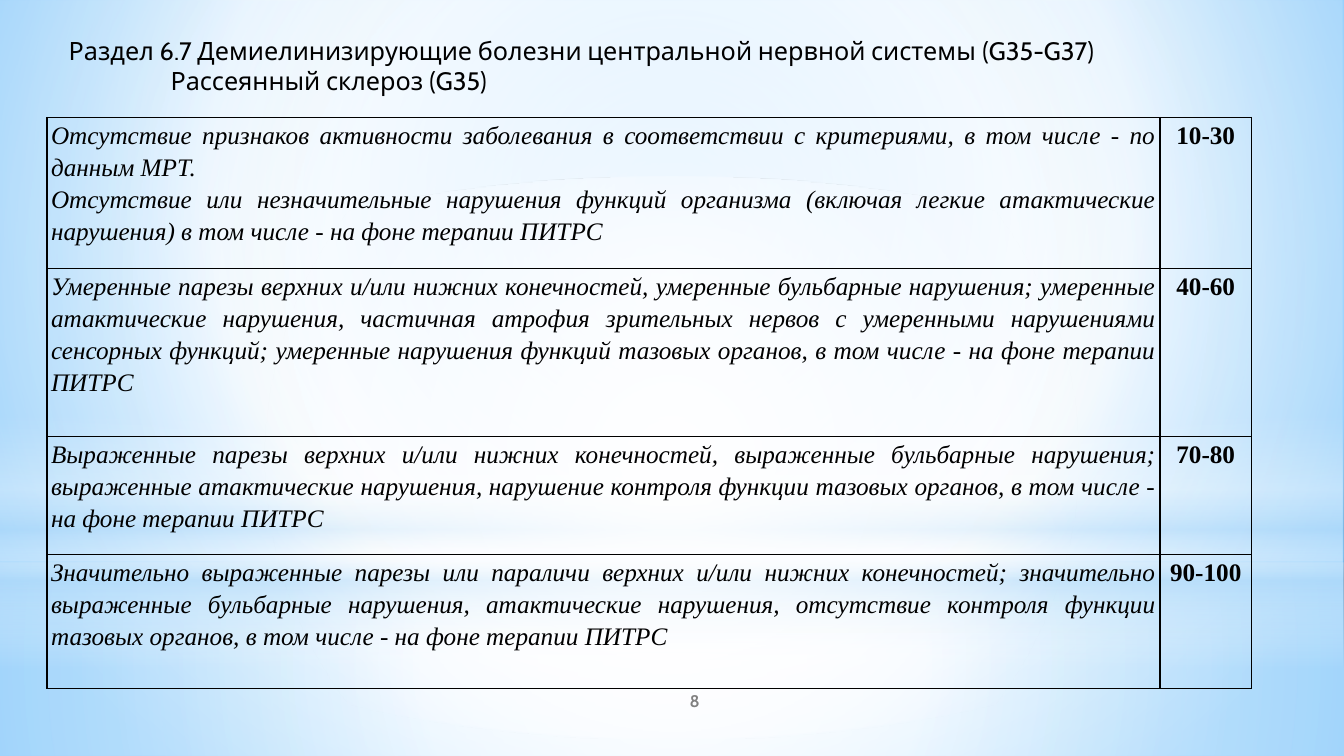
from lxml import etree
from pptx import Presentation, util as u
from pptx.dml.color import RGBColor
from pptx.enum import shapes, text
from pptx.oxml.ns import nsdecls, qn

COLS, ROWS = 160, 90
UNIT = u.Inches(1) / 12

BLACK = RGBColor(0x00, 0x00, 0x00)
GRAY = RGBColor(0x80, 0x80, 0x80)
WHITE = RGBColor(0xFF, 0xFF, 0xFF)
SKY = RGBColor(0x9E, 0xD5, 0xFF)
AZURE = RGBColor(0x5B, 0xB9, 0xFF)
PALE = RGBColor(0xB4, 0xDC, 0xFA)

HEAD_FONT = "Cabin"
BODY_FONT = "Times New Roman"
CENTRE = (50, 50, 50, 50)

TITLE = [
    "Раздел 6.7 Демиелинизирующие болезни центральной нервной системы (G35-G37)",
    "Рассеянный склероз (G35)",
]
CRITERIA = [
    (18, "10-30", [
        "Отсутствие признаков активности заболевания в соответствии с критериями, "
        "в том числе - по данным МРТ.",
        "Отсутствие или незначительные нарушения функций организма (включая легкие "
        "атактические нарушения) в том числе - на фоне терапии ПИТРС"]),
    (20, "40-60", [
        "Умеренные парезы верхних и/или нижних конечностей, умеренные бульбарные "
        "нарушения; умеренные атактические нарушения, частичная атрофия зрительных "
        "нервов с умеренными нарушениями сенсорных функций; умеренные нарушения "
        "функций тазовых органов, в том числе - на фоне терапии ПИТРС"]),
    (14, "70-80", [
        "Выраженные парезы верхних и/или нижних конечностей, выраженные бульбарные "
        "нарушения; выраженные атактические нарушения, нарушение контроля функции "
        "тазовых органов, в том числе - на фоне терапии ПИТРС"]),
    (16, "90-100", [
        "Значительно выраженные парезы или параличи верхних и/или нижних "
        "конечностей; значительно выраженные бульбарные нарушения, атактические "
        "нарушения, отсутствие контроля функции тазовых органов, в том числе - "
        "на фоне терапии ПИТРС"]),
]


def grid(*units):
    return [u.Emu(round(n * UNIT)) for n in units]


def set_gradient(fill, element, stops, focus=None):
    fill.solid()
    solid = element.find(".//" + qn("a:solidFill"))
    marks = "".join(
        f'<a:gs pos="{pos * 1000}"><a:srgbClr val="{color}">'
        f'<a:alpha val="{alpha * 1000}"/></a:srgbClr></a:gs>'
        for pos, color, alpha in stops)
    if focus:
        sides = " ".join(f'{k}="{v * 1000}"' for k, v in zip("ltrb", focus))
        shade = f'<a:path path="circle"><a:fillToRect {sides}/></a:path>'
    else:
        shade = '<a:lin ang="5400000" scaled="0"/>'
    solid.getparent().replace(solid, etree.fromstring(
        f'<a:gradFill {nsdecls("a")} rotWithShape="1">'
        f'<a:gsLst>{marks}</a:gsLst>{shade}</a:gradFill>'))


def add_glow(s, kind, top, height, stops, focus=None):
    sp = s.shapes.add_shape(kind, *grid(0, top, COLS, height))
    sp.shadow.inherit = False
    sp.line.fill.background()
    set_gradient(sp.fill, sp._element.spPr, stops, focus)


def write(tf, lines, font, size, color=BLACK, align=None, spacing=None,
          bold=False, italic=False):
    tf.text = "\n".join(lines)
    for p in tf.paragraphs:
        p.alignment = align
        p.line_spacing = spacing
        for r in p.runs:
            r.font.name = font
            r.font.size = u.Pt(size)
            r.font.color.rgb = color
            r.font.bold = bold
            r.font.italic = italic


def add_text(s, box, lines, size, **style):
    tf = s.shapes.add_textbox(*grid(*box)).text_frame
    tf.word_wrap = True
    write(tf, lines, HEAD_FONT, size, **style)
    return tf


def add_borders(cell):
    tcPr = cell._tc.get_or_add_tcPr()
    for i, side in enumerate(("lnL", "lnR", "lnT", "lnB")):
        tcPr.insert(i, etree.fromstring(
            f'<a:{side} {nsdecls("a")} w="{u.Pt(1)}"><a:solidFill>'
            f'<a:srgbClr val="{BLACK}"/></a:solidFill></a:{side}>'))


def fill_cell(cell, lines, **style):
    cell.margin_left = cell.margin_right = u.Inches(0.04)
    cell.margin_top = cell.margin_bottom = 0
    cell.fill.background()
    write(cell.text_frame, lines, BODY_FONT, 18, spacing=1.15, **style)
    add_borders(cell)


def add_criteria(s, left, top, widths):
    heights = [height for height, _, _ in CRITERIA]
    table = s.shapes.add_table(
        len(CRITERIA), len(widths),
        *grid(left, top, sum(widths), sum(heights))).table
    table.first_row = table.horz_banding = False
    for column, width in zip(table.columns, grid(*widths)):
        column.width = width
    for row, height, (_, score, lines) in zip(table.rows, grid(*heights), CRITERIA):
        row.height = height
        fill_cell(row.cells[0], lines, align=text.PP_ALIGN.JUSTIFY, italic=True)
        fill_cell(row.cells[1], [score], align=text.PP_ALIGN.CENTER, bold=True)


def add_backdrop(s):
    rect, oval = shapes.MSO_SHAPE.RECTANGLE, shapes.MSO_SHAPE.OVAL
    set_gradient(s.background.fill, s._element,
                 [(0, SKY, 100), (60, WHITE, 100), (100, AZURE, 100)],
                 (20, 10, 20, 60))
    add_glow(s, rect, 67, 23,
             [(0, WHITE, 91), (37, WHITE, 76), (100, PALE, 79)], CENTRE)
    add_glow(s, rect, 0, 67,
             [(0, WHITE, 89), (48, WHITE, 62), (100, PALE, 79)], CENTRE)
    add_glow(s, rect, 49.5, 30,
             [(0, WHITE, 0), (29, WHITE, 30), (45, PALE, 40),
              (55, WHITE, 26), (65, PALE, 60), (100, WHITE, 0)])
    add_glow(s, oval, 21, 67, [(0, WHITE, 100), (56, WHITE, 0)], CENTRE)


def main():
    prs = Presentation()
    prs.slide_width, prs.slide_height = grid(COLS, ROWS)
    s = prs.slides.add_slide(prs.slide_layouts[6])
    add_backdrop(s)
    number = add_text(s, (66.7, 81, 32, 4.8), ["8"], 12, color=GRAY,
                      align=text.PP_ALIGN.CENTER, bold=True)
    number.vertical_anchor = text.MSO_ANCHOR.MIDDLE
    title = add_text(s, (7, 3.6, 149.4, 8.5), TITLE, 18)
    title.paragraphs[1]._p.get_or_add_pPr().set("marL", str(u.Inches(1.01)))
    add_criteria(s, 5.6, 14, (132.5, 10.9))
    prs.save("out.pptx")


if __name__ == "__main__":
    main()
